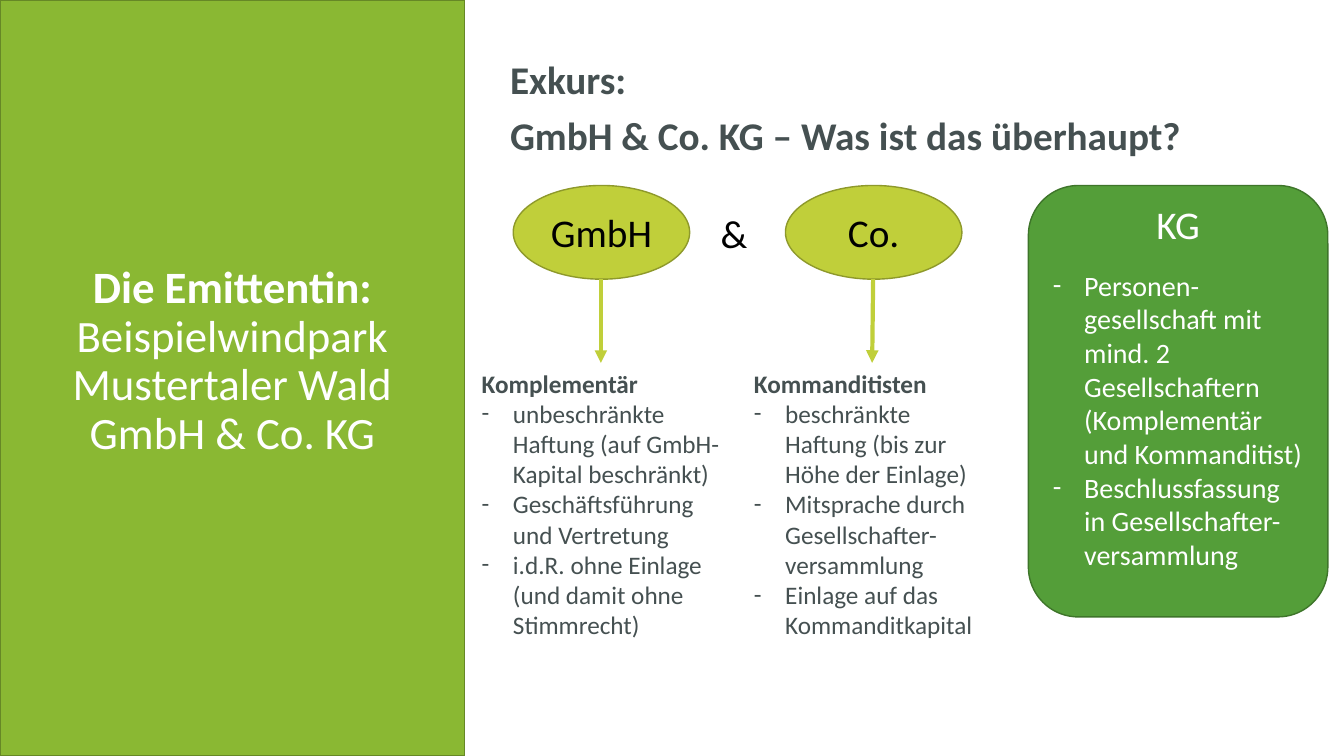
from lxml.etree import SubElement
from pptx import Presentation
from pptx.dml.color import RGBColor
from pptx.enum.shapes import MSO_CONNECTOR, MSO_SHAPE
from pptx.enum.text import MSO_ANCHOR, PP_ALIGN
from pptx.oxml.ns import qn
from pptx.util import Pt

SCALE = 9144  # EMU per px, 100 px to the inch

LEAF = RGBColor(0x8A, 0xB8, 0x33)
LEAF_EDGE = RGBColor(0x66, 0x88, 0x26)
LIME = RGBColor(0xC0, 0xCF, 0x3A)
LIME_EDGE = RGBColor(0x8E, 0x99, 0x2B)
GREEN = RGBColor(0x54, 0x9E, 0x39)
GREEN_EDGE = RGBColor(0x3E, 0x75, 0x2A)
SLATE = RGBColor(0x45, 0x50, 0x51)
BLACK = RGBColor(0, 0, 0)
WHITE = RGBColor(0xFF, 0xFF, 0xFF)

CENTER = {"alignment": PP_ALIGN.CENTER}
MIDDLE = {"vertical_anchor": MSO_ANCHOR.MIDDLE}


def px(n):
    return n * SCALE


def apply(obj, fmt):
    for name, value in fmt.items():
        setattr(obj, name, value)


class SlideBuilder:
    font = "Calibri"
    indent = 31

    def __init__(self, slide):
        self.shapes = slide.shapes

    def shape(self, kind, box, fill, edge):
        sp = self.shapes.add_shape(kind, *map(px, box))
        sp.shadow.inherit = False
        sp.fill.solid()
        sp.fill.fore_color.rgb = fill
        sp.line.color.rgb = edge
        sp.line.width = Pt(1)
        return sp

    def textbox(self, box, frame=None):
        sp = self.shapes.add_textbox(*map(px, box))
        apply(sp.text_frame, {"word_wrap": True, **(frame or {})})
        return sp

    def paragraph(self, sp, text, size, color, bold=False, fmt=None, bullet=False):
        """Fill the first paragraph if it is still empty, else append one."""
        tf = sp.text_frame
        p = tf.paragraphs[0]
        if p.runs:
            p = tf.add_paragraph()
        apply(p, {"alignment": PP_ALIGN.LEFT, **(fmt or {})})
        if bullet:
            pPr = p._p.get_or_add_pPr()
            pPr.set("marL", str(px(self.indent)))
            pPr.set("indent", str(-px(self.indent)))
            SubElement(pPr, qn("a:buFont")).set("typeface", self.font)
            SubElement(pPr, qn("a:buChar")).set("char", "-")
        self.run(p, text, size, color, bold)
        return p

    def run(self, p, text, size, color, bold=False):
        r = p.add_run()
        r.text = text
        apply(r.font, {"name": self.font, "size": Pt(size), "bold": bold})
        r.font.color.rgb = color

    def bullets(self, sp, items, size, color):
        for item in items:
            self.paragraph(sp, item, size, color, bullet=True)

    def arrow(self, x1, y1, x2, y2):
        cn = self.shapes.add_connector(MSO_CONNECTOR.STRAIGHT, *map(px, (x1, y1, x2, y2)))
        cn.line.color.rgb = LIME
        cn.line.width = Pt(3)
        SubElement(cn.line._get_or_add_ln(), qn("a:tailEnd")).set("type", "triangle")
        SubElement(cn._element.spPr, qn("a:effectLst"))

    def partner(self, left, name, tip, role, duties):
        """Ellipse with an arrow down to the partner's role and duties."""
        sp = self.shape(MSO_SHAPE.OVAL, (left, 184, 175, 93), LIME, LIME_EDGE)
        apply(sp.text_frame, MIDDLE)
        self.paragraph(sp, name, 28, BLACK, fmt=CENTER)
        self.arrow(left + 87, 277, tip, 360)
        sp = self.textbox((left - 41, 360, 256, 343))
        self.paragraph(sp, role, 18, SLATE, bold=True)
        self.bullets(sp, duties, 18, SLATE)


def main():
    prs = Presentation()
    prs.slide_width, prs.slide_height = px(1333), px(750)
    s = SlideBuilder(prs.slides.add_slide(prs.slide_layouts[6]))

    s.shape(MSO_SHAPE.RECTANGLE, (0, 0, 461, 750), LEAF, LEAF_EDGE)
    issuer = s.textbox((55, 258, 353, 202), {"margin_left": px(8), **MIDDLE})
    p = s.paragraph(issuer, "Die Emittentin:", 32, WHITE, bold=True,
                    fmt={"line_spacing": 0.9, **CENTER})
    p.add_line_break()
    s.run(p, "Beispielwindpark Mustertaler Wald GmbH & Co. KG", 32, WHITE)

    heading = s.textbox((496, 55, 799, 93))
    s.paragraph(heading, "Exkurs:", 28, SLATE, bold=True, fmt={"line_spacing": 0.9})
    s.paragraph(heading, "GmbH & Co. KG – Was ist das überhaupt?", 28, SLATE, bold=True,
                fmt={"line_spacing": 0.9, "space_before": Pt(10)})

    s.partner(509, "GmbH", 596, "Komplementär", [
        "unbeschränkte Haftung (auf GmbH-Kapital beschränkt)",
        "Geschäftsführung und Vertretung",
        "i.d.R. ohne Einlage (und damit ohne Stimmrecht)",
    ])
    s.partner(779, "Co.", 865, "Kommanditisten", [
        "beschränkte Haftung (bis zur Höhe der Einlage)",
        "Mitsprache durch Gesellschafter- versammlung",
        "Einlage auf das Kommanditkapital",
    ])
    ampersand = s.textbox((705, 203, 47, 57), {"word_wrap": False})
    s.paragraph(ampersand, "&", 28, BLACK)

    kg = s.shape(MSO_SHAPE.ROUNDED_RECTANGLE, (1020, 184, 297, 428), GREEN, GREEN_EDGE)
    apply(kg.text_frame, {"margin_bottom": px(36), **MIDDLE})
    s.paragraph(kg, "KG", 28, WHITE, fmt={"space_after": Pt(15), **CENTER})
    s.bullets(kg, [
        "Personen-gesellschaft mit mind. 2 Gesellschaftern (Komplementär und Kommanditist)",
        "Beschlussfassung in Gesellschafter-versammlung",
    ], 20, WHITE)

    prs.save("out.pptx")


if __name__ == "__main__":
    main()
